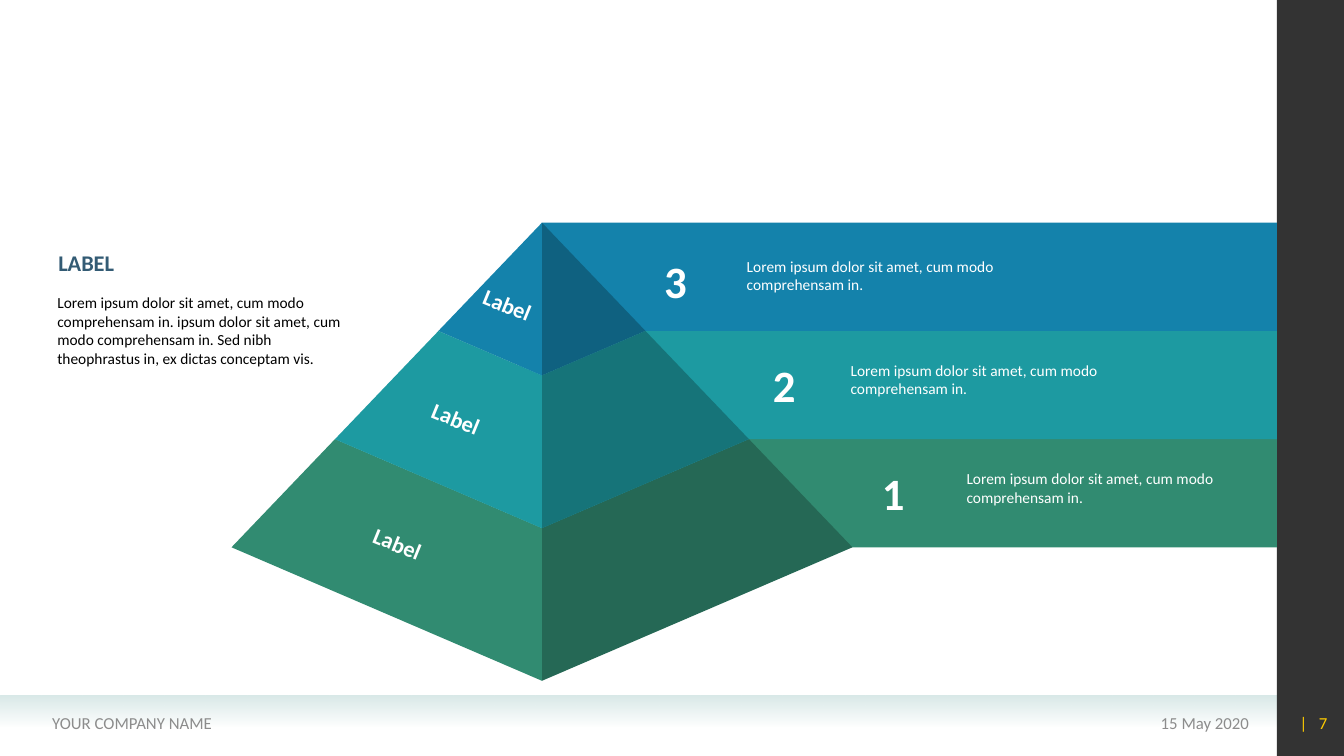
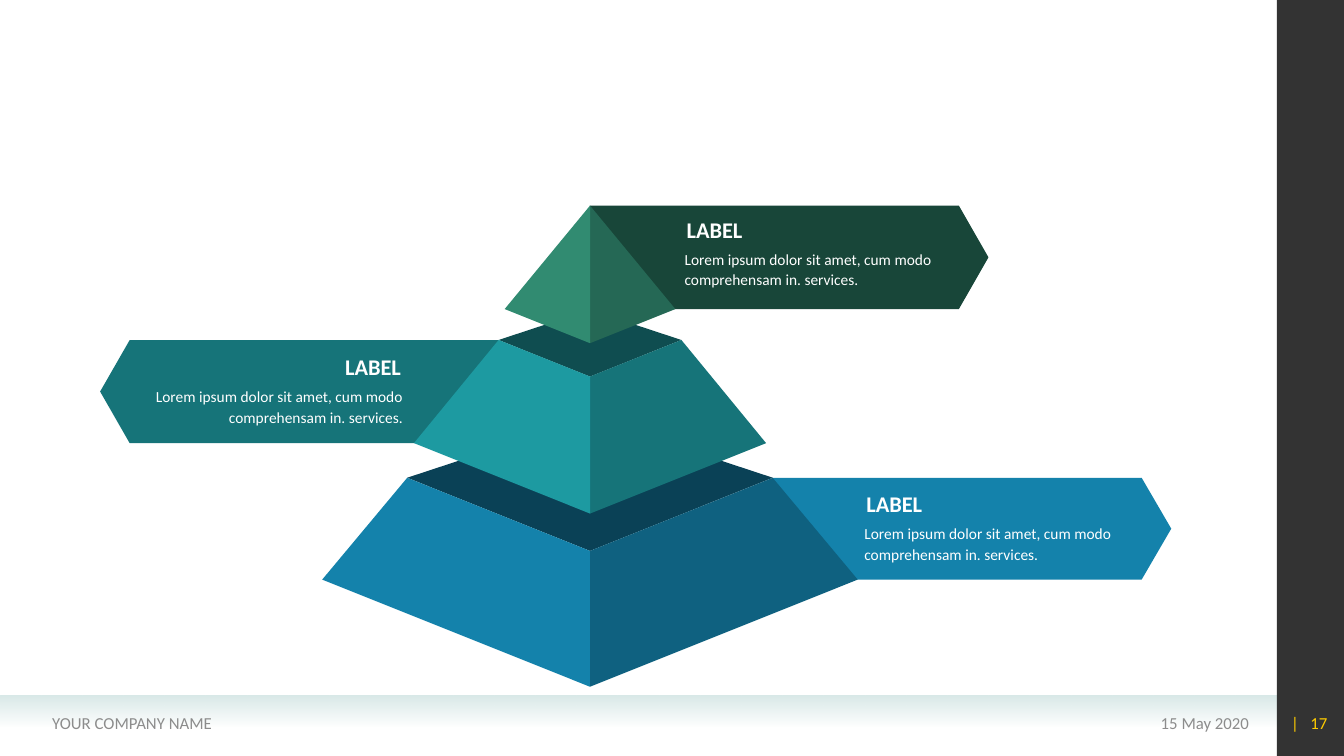
import pptx
import pptx.dml.color
import pptx.enum.shapes
import pptx.enum.text
import pptx.oxml.ns
import pptx.util
from lxml import etree

# The slide is a grid of 40 columns by 22.5 rows of square cells.
CELL = pptx.util.Inches(1) / 3
COLUMNS, ROWS = 40, 22.5
SIDEBAR = 38
ALIGN = pptx.enum.text.PP_ALIGN

WHITE, BLACK = "FFFFFF", "000000"
GREEN, DARK_GREEN, DEEP_GREEN = "318B71", "256855", "184639"
TEAL, DARK_TEAL, DEEP_TEAL = "1D9AA1", "167479", "0F4D50"
BLUE, DARK_BLUE, DEEP_BLUE = "1482AB", "0F6180", "0A4156"
SKY, MINT = "54C2EB", "70CDB2"
SLATE, GREY, YELLOW, MIST = "335B74", "8C8C8C", "FFCC00", "D9E9E8"

FONTS = {
    "footer": {"name": "Calibri", "size": pptx.util.Pt(12)},
    "body": {"name": "Calibri", "size": pptx.util.Pt(11)},
    "heading": {"name": "Calibri", "size": pptx.util.Pt(16), "bold": True},
    "number": {"name": "Calibri", "size": pptx.util.Pt(32), "bold": True},
}
HEADING_SIZE = (2.64, 1.11)
SHORT_TEXT = "Lorem ipsum dolor sit amet, cum modo comprehensam in."


def cells(*lengths):
    return [round(length * CELL) for length in lengths]


def colour(hex_string):
    return pptx.dml.color.RGBColor.from_string(hex_string)


def plain(shape):
    """Remove the outline and shadow."""
    shape.line.fill.background()
    shape.shadow.inherit = False
    return shape


def set_alpha(element, percent):
    etree.SubElement(element, pptx.oxml.ns.qn("a:alpha"), val=str(percent * 1000))


def rgb_elements(shape):
    return list(shape.element.iter(pptx.oxml.ns.qn("a:srgbClr")))


def block(slide, box, fill):
    rectangle = pptx.enum.shapes.MSO_SHAPE.RECTANGLE
    shape = plain(slide.shapes.add_shape(rectangle, *cells(*box)))
    shape.fill.solid()
    shape.fill.fore_color.rgb = colour(fill)
    return shape


def polygon(slide, points, fill):
    start, *others = [cells(*point) for point in points]
    builder = slide.shapes.build_freeform(*start, scale=1.0)
    builder.add_line_segments(others, close=True)
    shape = plain(builder.convert_to_shape())
    shape.fill.solid()
    shape.fill.fore_color.rgb = colour(fill)


def write(slide, box, words, style, ink, align=ALIGN.LEFT, leading=None, turn=0):
    """Add one paragraph; body text wraps from the top, the rest is centred in height."""
    area = slide.shapes.add_textbox(*cells(*box))
    area.rotation = turn
    frame = area.text_frame
    anchors = pptx.enum.text.MSO_ANCHOR
    is_body = style == "body"
    frame.word_wrap = is_body or style == "footer"
    frame.vertical_anchor = anchors.TOP if is_body else anchors.MIDDLE
    paragraph = frame.paragraphs[0]
    paragraph.alignment = align
    if leading:
        paragraph.line_spacing = pptx.util.Pt(leading)
    for piece in [words] if isinstance(words, str) else words:
        run = paragraph.add_run()
        run.text = piece
        for attribute, value in FONTS[style].items():
            setattr(run.font, attribute, value)
        run.font.color.rgb = colour(ink)
    return paragraph


def footer_band(slide):
    band = block(slide, (0, 20.7, SIDEBAR, 0.93), MIST)
    band.fill.gradient()
    band.fill.gradient_angle = 270
    for stop in band.fill.gradient_stops:
        stop.color.rgb = colour(MIST)
    set_alpha(rgb_elements(band)[-1], 0)


def framed_slide(deck, page):
    """Add a blank slide with the shared band, sidebar and footer."""
    slide = deck.slides.add_slide(deck.slide_layouts[6])
    footer_band(slide)
    sidebar = block(slide, (SIDEBAR, 0, COLUMNS - SIDEBAR, ROWS), BLACK)
    set_alpha(rgb_elements(sidebar)[0], 80)
    row, height = 20.9, 1.2
    write(slide, (27.3, row, 10.17, height), "15 May 2020", "footer", GREY, ALIGN.RIGHT)
    write(slide, (1.26, row, 14.7, height), "YOUR COMPANY NAME", "footer", GREY)
    number = write(slide, (37.8, row, 2, height), ("|", " ", str(page)),
                   "footer", YELLOW, ALIGN.RIGHT)
    number.runs[1].font._element.set("spc", "540")
    return slide


def tier(slide, axis, upper, lower, depth, fills):
    """Draw a pyramid layer; upper and lower are (row, half width) of its edges."""
    (top, top_half), (base, base_half) = upper, lower
    front, back = depth
    left_fill, right_fill, lid_fill = fills
    notch = (axis, top + front * top_half)
    tip = (axis, base + front * base_half)
    if top_half:
        polygon(slide, [(axis - top_half, top), (axis, top - back * top_half),
                        (axis + top_half, top), notch], lid_fill)
    for side, fill in ((1, right_fill), (-1, left_fill)):
        polygon(slide, [notch, tip, (axis + side * base_half, base),
                        (axis + side * top_half, top)], fill)


def callout(slide, start, top, base, side, fill, inset, drop):
    """Draw a pointed banner with heading and text; side is 1 for right, -1 for left."""
    shoulder, point = start + side * 10.98, start + side * 11.86
    polygon(slide, [(start, top), (shoulder, top), (point, (top + base) / 2),
                    (shoulder, base), (start, base)], fill)
    align = ALIGN.RIGHT if side < 0 else ALIGN.LEFT

    def placed(offset, row, width, height):
        edge = start + side * offset
        return (edge if side > 0 else edge - width, row, width, height)

    write(slide, placed(inset, top + drop + 0.96, 8.31, 1.5),
          "Lorem ipsum dolor sit amet, cum modo comprehensam in. services.",
          "body", WHITE, align, 14.7)
    write(slide, placed(inset + 0.06, top + drop, *HEADING_SIZE), "LABEL",
          "heading", WHITE, align)


def solid_pyramid(deck):
    slide = framed_slide(deck, 7)
    axis, apex, step, half_step = 16.13, 6.63, 3.22, 3.08
    # level, fills, number, number place, text place, label place
    levels = [
        (2, (GREEN, DARK_GREEN, SKY), "1", (25.95, 13.71), (28.47, 13.83), (10.8, 15.66)),
        (1, (TEAL, DARK_TEAL, MINT), "2", (22.71, 10.5), (25.02, 10.59), (12.54, 11.94)),
        (0, (BLUE, DARK_BLUE, None), "3", (19.47, 7.38), (21.93, 7.5), (14.07, 8.55)),
    ]
    for level, fills, number, number_at, text_at, label_at in levels:
        edges = [(apex + n * step, n * half_step) for n in (level, level + 1)]
        block(slide, (axis, edges[0][0], SIDEBAR - axis, step), fills[0])
        tier(slide, axis, *edges, (0.43, 0.4), fills)
        write(slide, (*number_at, 1.32, 1.92), number, "number", WHITE)
        write(slide, (*text_at, 7.95, 1.41), SHORT_TEXT, "body", WHITE)
        write(slide, (*label_at, 2.28, 1.11), "Label", "heading", WHITE, turn=22.2)
    write(slide, (1.41, 8.58, 9.24, 2.52),
          "Lorem ipsum dolor sit amet, cum modo comprehensam in. ipsum dolor sit amet, "
          "cum modo comprehensam in. Sed nibh theophrastus in, ex dictas conceptam vis.",
          "body", BLACK)
    write(slide, (1.44, 7.26, *HEADING_SIZE), "LABEL", "heading", SLATE)


def split_pyramid(deck):
    slide = framed_slide(deck, 17)
    axis = 17.56
    # upper edge, lower edge, fills, banner side, banner fill, text inset, text drop
    levels = [
        ((14.22, 5.44), (17.25, 7.97), (BLUE, DARK_BLUE, DEEP_BLUE), 1, BLUE, 2.43, 0.21),
        ((10.12, 2.72), (13.19, 5.24), (TEAL, DARK_TEAL, DEEP_TEAL), -1, DARK_TEAL, 2.55, 0.24),
        ((6.12, 0), (9.2, 2.54), (GREEN, DARK_GREEN, None), 1, DEEP_GREEN, 2.52, 0.15),
    ]
    for upper, lower, _, side, fill, inset, drop in levels:
        callout(slide, axis + side * upper[1], upper[0], lower[0], side, fill, inset, drop)
    for upper, lower, fills, *_ in levels:
        tier(slide, axis, upper, lower, (0.4, 0.33), fills)


def main():
    deck = pptx.Presentation()
    deck.slide_width, deck.slide_height = cells(COLUMNS, ROWS)
    solid_pyramid(deck)
    split_pyramid(deck)
    deck.save("out.pptx")


if __name__ == "__main__":
    main()
